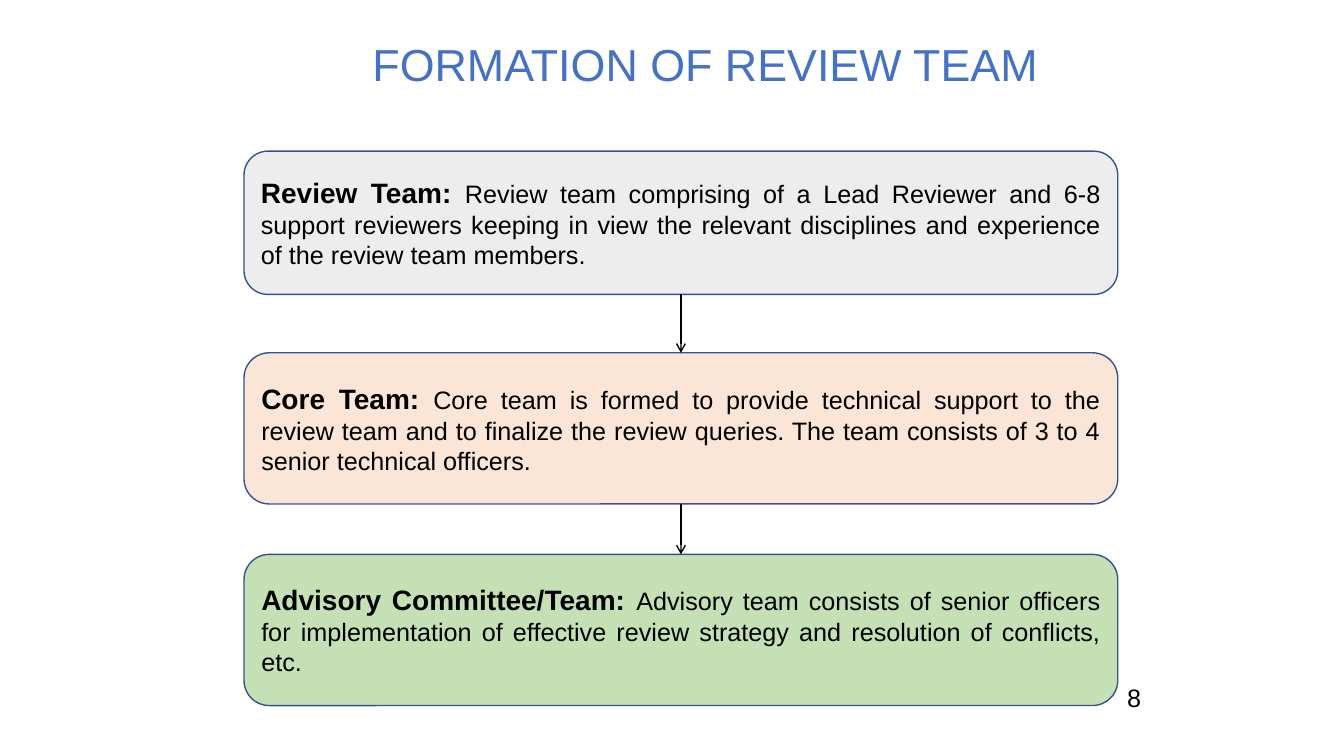
from dataclasses import dataclass
from itertools import pairwise

from lxml.etree import SubElement
from pptx import Presentation
from pptx.dml.color import RGBColor
from pptx.enum.shapes import MSO_CONNECTOR, MSO_SHAPE
from pptx.enum.text import MSO_ANCHOR, PP_ALIGN
from pptx.oxml.ns import qn
from pptx.util import Cm, Pt


@dataclass(frozen=True)
class Theme:
    font: str = "Arial"
    title_color: str = "4472C4"
    ink: str = "000000"
    outline: str = "325491"
    review_fill: str = "EDEDED"
    core_fill: str = "FBE5D6"
    advisory_fill: str = "C5E0B4"
    title_size: int = 32
    heading_size: int = 20
    body_size: int = 18
    line_width: int = 1


def add_run(paragraph, text, *, font, size, color, bold=False):
    run = paragraph.add_run()
    run.text = text
    run.font.name = font
    run.font.size = Pt(size)
    run.font.bold = bold
    run.font.color.rgb = RGBColor.from_string(color)


class SlideBuilder:
    def __init__(self, slide, theme):
        self.slide = slide
        self.theme = theme

    def label(self, text, left, top, width, height, *, size, color, align,
              anchor=MSO_ANCHOR.TOP, line_spacing=1.0):
        box = self.slide.shapes.add_textbox(Cm(left), Cm(top), Cm(width), Cm(height))
        frame = box.text_frame
        frame.word_wrap = True
        frame.vertical_anchor = anchor
        paragraph = frame.paragraphs[0]
        paragraph.alignment = align
        paragraph.line_spacing = line_spacing
        add_run(paragraph, text, font=self.theme.font, size=size, color=color)

    def team_box(self, heading, description, left, top, width, height, *, fill):
        theme = self.theme
        shape = self.slide.shapes.add_shape(
            MSO_SHAPE.ROUNDED_RECTANGLE, Cm(left), Cm(top), Cm(width), Cm(height))
        shape.shadow.inherit = False
        shape.fill.solid()
        shape.fill.fore_color.rgb = RGBColor.from_string(fill)
        shape.line.color.rgb = RGBColor.from_string(theme.outline)
        shape.line.width = Pt(theme.line_width)
        frame = shape.text_frame
        frame.word_wrap = True
        frame.vertical_anchor = MSO_ANCHOR.MIDDLE
        paragraph = frame.paragraphs[0]
        paragraph.alignment = PP_ALIGN.JUSTIFY
        paragraph.space_after = Pt(6)
        add_run(paragraph, f"{heading}: ", font=theme.font,
                size=theme.heading_size, color=theme.ink, bold=True)
        add_run(paragraph, description, font=theme.font,
                size=theme.body_size, color=theme.ink)
        return shape

    def arrow(self, upper, lower):
        center = upper.left + upper.width // 2
        connector = self.slide.shapes.add_connector(
            MSO_CONNECTOR.STRAIGHT, center, upper.top + upper.height, center, lower.top)
        connector.line.color.rgb = RGBColor.from_string(self.theme.ink)
        connector.line.width = Pt(self.theme.line_width)
        properties = connector.element.spPr
        SubElement(properties.find(qn("a:ln")), qn("a:tailEnd"), type="arrow")
        SubElement(properties, qn("a:effectLst"))


def main():
    theme = Theme()
    presentation = Presentation()
    presentation.slide_width = Cm(33.87)
    presentation.slide_height = Cm(19.05)
    slide = presentation.slides.add_slide(presentation.slide_layouts[6])
    builder = SlideBuilder(slide, theme)

    builder.label("FORMATION OF REVIEW TEAM", 6.35, 0.1, 22.86, 3.18,
                  size=theme.title_size, color=theme.title_color,
                  align=PP_ALIGN.CENTER, anchor=MSO_ANCHOR.MIDDLE, line_spacing=0.9)

    teams = [
        ("Review Team",
         "Review team comprising of a Lead Reviewer and 6-8 support reviewers keeping "
         "in view the relevant disciplines and experience of the review team members.",
         3.61, theme.review_fill),
        ("Core Team",
         "Core team is formed to provide technical support to the review team and to "
         "finalize the review queries. The team consists of 3 to 4 senior technical officers.",
         3.81, theme.core_fill),
        ("Advisory Committee/Team",
         "Advisory team consists of senior officers for implementation of effective "
         "review strategy and resolution of conflicts, etc.",
         3.81, theme.advisory_fill),
    ]
    first_top, pitch = 3.81, 5.08
    boxes = [
        builder.team_box(heading, description, 6.15, first_top + index * pitch,
                         22.02, height, fill=fill)
        for index, (heading, description, height, fill) in enumerate(teams)
    ]
    for upper, lower in pairwise(boxes):
        builder.arrow(upper, lower)

    builder.label("8", 23.09, 17.07, 5.92, 1.32, size=theme.body_size,
                  color=theme.ink, align=PP_ALIGN.RIGHT)
    presentation.save("out.pptx")


if __name__ == "__main__":
    main()
